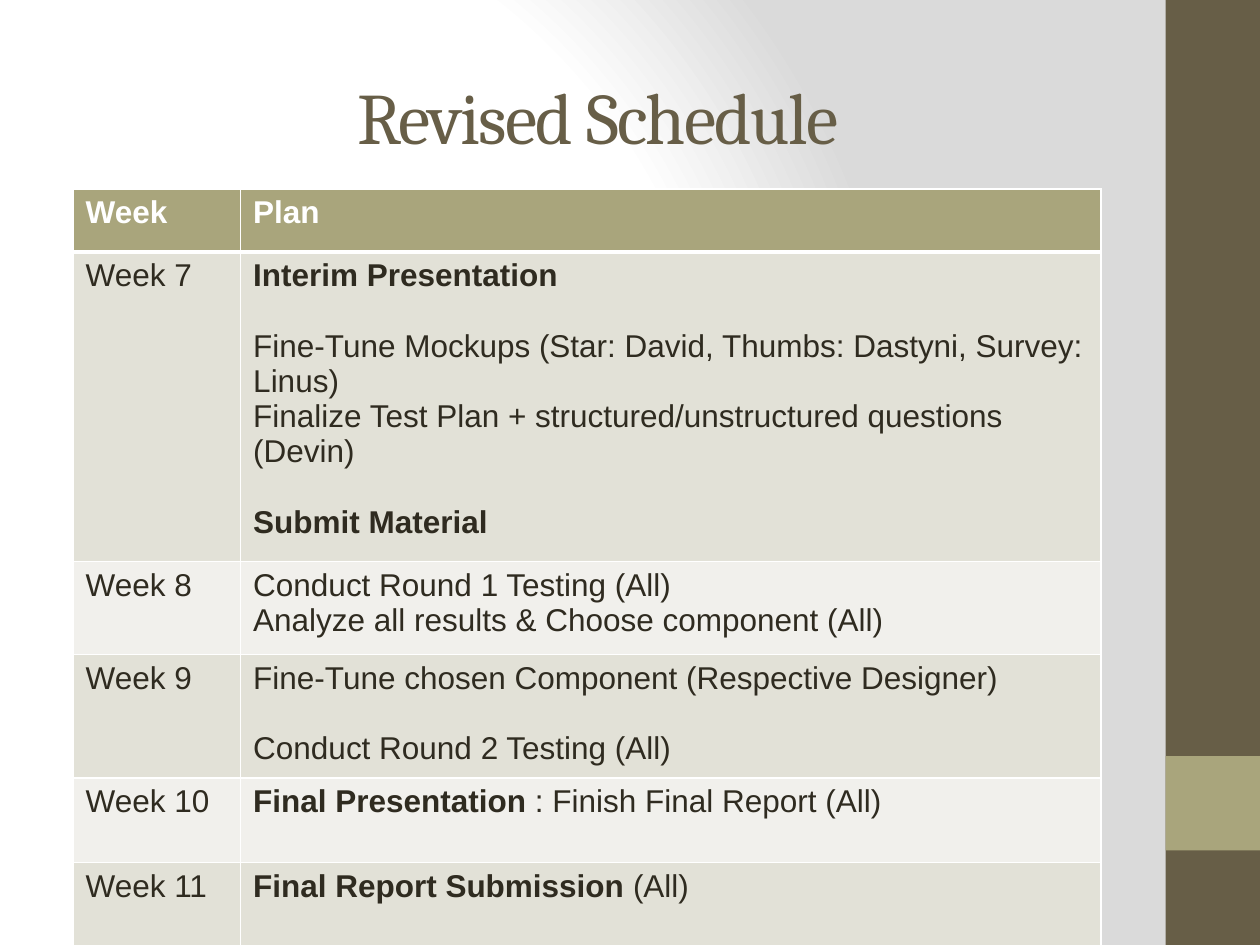
from dataclasses import dataclass

from lxml.etree import SubElement
from pptx import Presentation
from pptx.dml.color import RGBColor
from pptx.enum.shapes import MSO_SHAPE
from pptx.enum.text import MSO_ANCHOR, PP_ALIGN
from pptx.oxml import parse_xml
from pptx.oxml.ns import nsdecls, qn
from pptx.slide import Slide
from pptx.table import _Cell
from pptx.text.text import TextFrame, _Run
from pptx.util import Inches, Pt

COLORS = {
    "white": "FFFFFF",
    "gray": "DADADA",
    "brown": "675E47",
    "olive": "A9A57C",
    "ink": "2F2B20",
    "band_dark": "E2E1D7",
    "band_light": "F1F0EC",
}


@dataclass(frozen=True)
class Bar:
    top: float
    height: float
    color: str


@dataclass(frozen=True)
class Line:
    bold: str = ""
    plain: str = ""
    gap: bool = False


@dataclass(frozen=True)
class Week:
    label: Line
    plan: tuple[Line, ...]
    height: float


BARS = (Bar(0, 7.5, "brown"), Bar(6, 0.75, "olive"))

SCHEDULE = (
    Week(Line("Week"), (Line("Plan"),), 0.5),
    Week(
        Line(plain="Week 7"),
        (
            Line("Interim Presentation"),
            Line(
                plain="Fine-Tune Mockups (Star: David, Thumbs: Dastyni, Survey: Linus)",
                gap=True,
            ),
            Line(plain="Finalize Test Plan + structured/unstructured questions (Devin)"),
            Line("Submit Material", gap=True),
        ),
        1.67,
    ),
    Week(
        Line(plain="Week 8"),
        (
            Line(plain="Conduct Round 1 Testing (All)"),
            Line(plain="Analyze all results & Choose component (All)"),
        ),
        0.74,
    ),
    Week(
        Line(plain="Week 9"),
        (
            Line(plain="Fine-Tune chosen Component (Respective Designer)"),
            Line(plain="Conduct Round 2 Testing (All)", gap=True),
        ),
        0.55,
    ),
    Week(
        Line(plain="Week 10"),
        (Line("Final Presentation", " : Finish Final Report (All)"),),
        0.67,
    ),
    Week(Line(plain="Week 11"), (Line("Final Report Submission", " (All)"),), 0.68),
)


def rgb(color: str) -> RGBColor:
    return RGBColor.from_string(COLORS[color])


def set_background(slide: Slide) -> None:
    stops = "".join(
        f'<a:gs pos="{position * 1000}"><a:srgbClr val="{COLORS[color]}"/></a:gs>'
        for position, color in ((0, "white"), (75, "white"), (100, "gray"))
    )
    fill = slide.background.fill
    fill.solid()
    properties = slide.element.cSld.find(qn("p:bg")).find(qn("p:bgPr"))
    gradient = parse_xml(
        f'<a:gradFill {nsdecls("a")} rotWithShape="1"><a:gsLst>{stops}</a:gsLst>'
        '<a:path path="circle">'
        '<a:fillToRect l="20000" t="50000" r="100000" b="50000"/>'
        "</a:path></a:gradFill>"
    )
    properties.replace(properties.find(qn("a:solidFill")), gradient)


def draw_bar(slide: Slide, bar: Bar) -> None:
    shape = slide.shapes.add_shape(
        MSO_SHAPE.RECTANGLE, Inches(9.25), Inches(bar.top), Inches(0.75), Inches(bar.height)
    )
    shape.shadow.inherit = False
    shape.fill.solid()
    shape.fill.fore_color.rgb = rgb(bar.color)
    shape.line.fill.background()


def format_run(run: _Run, font: str, size: float, color: str, bold: bool = False) -> None:
    run.font.name = font
    run.font.size = Pt(size)
    run.font.bold = bold
    run.font.color.rgb = rgb(color)


def draw_title(slide: Slide) -> None:
    box = slide.shapes.add_textbox(Inches(0.58), Inches(0.58), Inches(8.33), Inches(0.68))
    text_frame = box.text_frame
    text_frame.word_wrap = True
    text_frame.vertical_anchor = MSO_ANCHOR.MIDDLE
    text_frame.text = "Revised Schedule"
    paragraph = text_frame.paragraphs[0]
    paragraph.alignment = PP_ALIGN.CENTER
    run = paragraph.runs[0]
    format_run(run, "Cambria", 41.4, "brown")
    run.font._element.set("spc", "-100")


def write_lines(text_frame: TextFrame, lines: tuple[Line, ...], color: str) -> None:
    for index, line in enumerate(lines):
        paragraph = text_frame.add_paragraph() if index else text_frame.paragraphs[0]
        if line.gap:
            paragraph.space_before = Pt(20)
        for text, bold in ((line.bold, True), (line.plain, False)):
            if text:
                run = paragraph.add_run()
                run.text = text
                format_run(run, "Arial", 18, color, bold)


def set_borders(cell: _Cell, top: float, bottom: float) -> None:
    properties = cell._tc.get_or_add_tcPr()
    for index, (side, width) in enumerate(
        (("lnL", 1), ("lnR", 1), ("lnT", top), ("lnB", bottom))
    ):
        border = parse_xml(f'<a:{side} {nsdecls("a")} w="{Pt(width)}"/>')
        fill = SubElement(border, qn("a:solidFill"))
        SubElement(fill, qn("a:srgbClr")).set("val", COLORS["white"])
        properties.insert(index, border)


def draw_schedule(slide: Slide) -> None:
    table = slide.shapes.add_table(
        len(SCHEDULE), 2, Inches(0.58), Inches(1.5), Inches(8.16), Inches(4.81)
    ).table
    table.horz_banding = False
    for column, width in zip(table.columns, (1.33, 6.83)):
        column.width = Inches(width)
    for index, week in enumerate(SCHEDULE):
        table.rows[index].height = Inches(week.height)
        band = "band_dark" if index % 2 else "band_light"
        fill = band if index else "olive"
        color = "ink" if index else "white"
        for column, lines in enumerate(((week.label,), week.plan)):
            cell = table.cell(index, column)
            cell.fill.solid()
            cell.fill.fore_color.rgb = rgb(fill)
            write_lines(cell.text_frame, lines, color)
            set_borders(cell, 3 if index == 1 else 1, 3 if index == 0 else 1)


def main() -> None:
    presentation = Presentation()
    presentation.slide_width = Inches(10)
    presentation.slide_height = Inches(7.5)
    slide = presentation.slides.add_slide(presentation.slide_layouts[6])
    set_background(slide)
    for bar in BARS:
        draw_bar(slide, bar)
    draw_title(slide)
    draw_schedule(slide)
    presentation.save("out.pptx")


if __name__ == "__main__":
    main()
